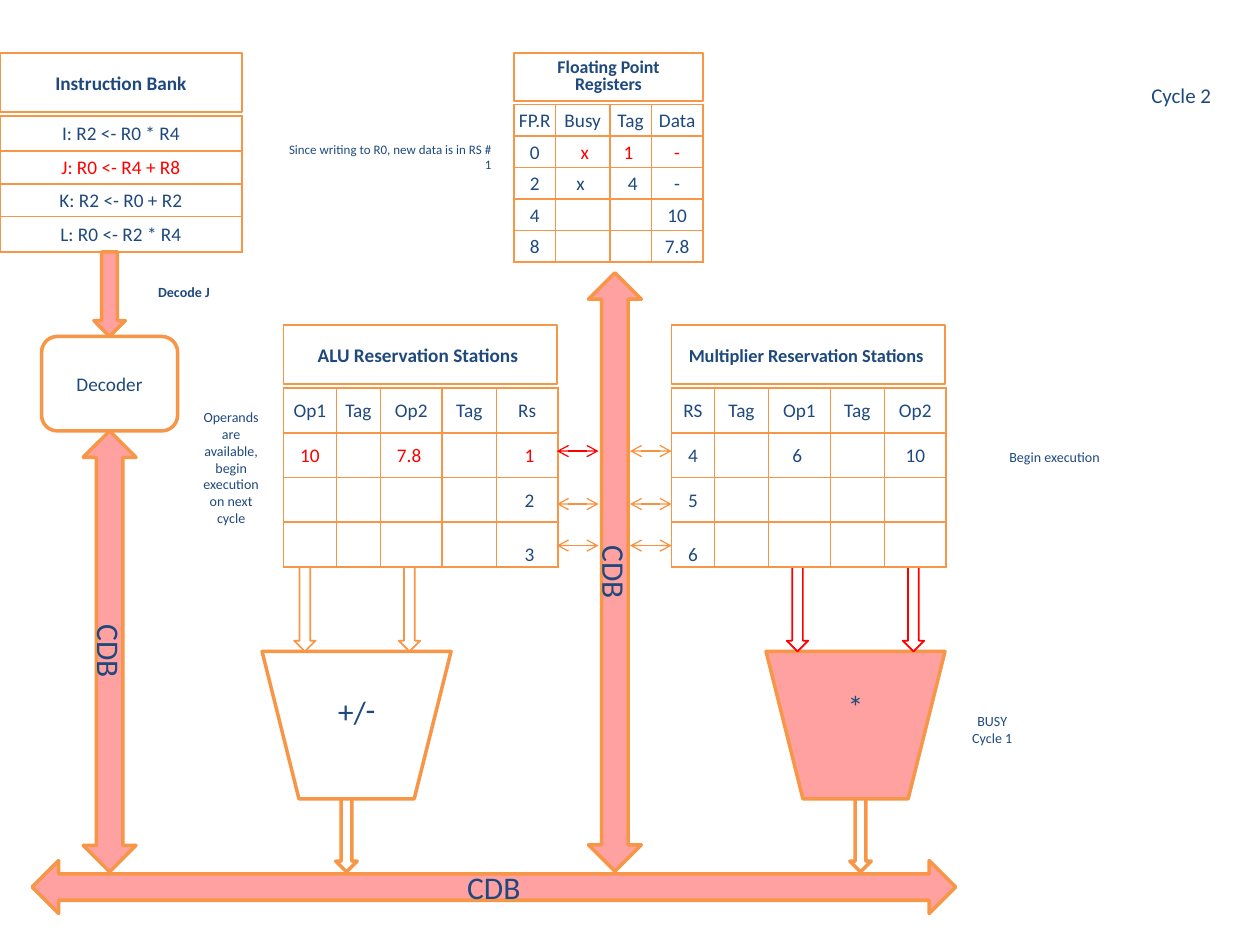
import pptx
import pptx.util
import pptx.dml.color
import pptx.enum.shapes
import pptx.enum.text
import pptx.oxml
import pptx.oxml.ns
import lxml.etree

Inches = pptx.util.Inches
Pt = pptx.util.Pt
SHAPE = pptx.enum.shapes.MSO_SHAPE
ALIGN = pptx.enum.text.PP_ALIGN
ANCHOR = pptx.enum.text.MSO_ANCHOR
qn = pptx.oxml.ns.qn

COLORS = {"navy": "1F497D", "orange": "F79646", "link": "F69240", "red": "FF0000", "white": "FFFFFF"}
BUSY_OPACITY = 37000
ARROW_WIDTH = 0.17
FEED_HEIGHT = 0.67
TITLE_HEIGHT = 0.47
TITLE_GAP = 0.03


def rgb(name):
    return pptx.dml.color.RGBColor.from_string(COLORS[name])


def write(frame, content, size=11, color="navy", bold=False, align=ALIGN.CENTER, spacing=None):
    frame.word_wrap = True
    frame.auto_size = pptx.enum.text.MSO_AUTO_SIZE.NONE
    frame.vertical_anchor = ANCHOR.MIDDLE
    for index, line in enumerate(content.split("\n")):
        paragraph = frame.paragraphs[0] if index == 0 else frame.add_paragraph()
        paragraph.alignment = align
        paragraph.line_spacing = spacing
        run = paragraph.add_run()
        run.text = line
        run.font.name = "Calibri"
        run.font.size = Pt(size)
        run.font.bold = bold
        run.font.color.rgb = rgb(color)


def paint(shape, line="orange", weight=1, busy=False):
    shape.fill.solid()
    shape.fill.fore_color.rgb = rgb("red" if busy else "white")
    if busy:
        tint = shape.fill._xPr.find(qn("a:solidFill"))[0]
        lxml.etree.SubElement(tint, qn("a:alpha")).set("val", str(BUSY_OPACITY))
    if line:
        shape.line.color.rgb = rgb(line)
        shape.line.width = Pt(weight)
    else:
        shape.line.fill.background()


def add_block(slide, preset, box, **style):
    block = slide.shapes.add_shape(preset, *map(Inches, box))
    block.shadow.inherit = False
    paint(block, **style)
    return block


def add_note(slide, box, content, **format):
    note = add_block(slide, SHAPE.RECTANGLE, box, line=None)
    write(note.text_frame, content, **format)


def add_heading(slide, box, content, **format):
    heading = add_block(slide, SHAPE.RECTANGLE, box)
    write(heading.text_frame, content, bold=True, **format)


def add_down_arrow(slide, center, top, height, width=ARROW_WIDTH, **style):
    add_block(slide, SHAPE.DOWN_ARROW, (center - width / 2, top, width, height), **style)


def format_cell(cell, content, color):
    cell.margin_left = cell.margin_right = cell.margin_top = Inches(0.01)
    cell.margin_bottom = 0
    cell.vertical_anchor = ANCHOR.MIDDLE
    if content:
        write(cell.text_frame, content, color=color)
        cell.text_frame.auto_size = None
    else:
        cell.text_frame.paragraphs[0]._p.get_or_add_endParaRPr().set("sz", "1100")
    properties = cell._tc.get_or_add_tcPr()
    for side in ("L", "R", "T", "B"):
        border = lxml.etree.SubElement(properties, qn("a:ln" + side), w=str(Pt(1)))
        fill = lxml.etree.SubElement(border, qn("a:solidFill"))
        lxml.etree.SubElement(fill, qn("a:srgbClr"), val=COLORS["orange"])
    cell.fill.background()


def add_grid(slide, left, top, widths, heights, rows, red=()):
    frame = slide.shapes.add_table(len(rows), len(widths), Inches(left), Inches(top),
                                   Inches(sum(widths)), Inches(sum(heights)))
    grid = frame.table
    grid.first_row = grid.horz_banding = False
    for column, width in zip(grid.columns, widths):
        column.width = Inches(width)
    for r, (row, height) in enumerate(zip(rows, heights)):
        grid.rows[r].height = Inches(height)
        for c, content in enumerate(row):
            format_cell(grid.cell(r, c), content, "red" if (r, c) in red else "navy")
    return grid


def add_instruction_bank(slide, left, top, width):
    add_heading(slide, (left, top, width, TITLE_HEIGHT), "Instruction Bank")
    instructions = ["I: R2 <- R0 * R4", "J: R0 <- R4 + R8", "K: R2 <- R0 + R2", "L: R0 <- R2 * R4"]
    add_grid(slide, left, top + 0.5, [width], [0.28, 0.26, 0.26, 0.28],
             [[instruction] for instruction in instructions], red={(1, 0)})


def add_decoder(slide, left, top, width, height):
    center = left + width / 2
    add_down_arrow(slide, center, top - FEED_HEIGHT, FEED_HEIGHT, width=0.25, weight=2, busy=True)
    decoder = add_block(slide, SHAPE.ROUNDED_RECTANGLE, (left, top, width, height), weight=2)
    write(decoder.text_frame, "Decoder")
    add_note(slide, (left + 0.67, top - 0.5, 0.92, 0.3), "Decode J", size=8, bold=True)


def add_registers(slide, left, top, width):
    add_heading(slide, (left, top, width, 0.38), "Floating Point Registers", size=10.2, spacing=0.8)
    rows = [["FP.R", "Busy", "Tag", "Data"],
            ["0", " x", "1 ", "-"],
            ["2", "x ", " 4", "-"],
            ["4", "", "", "10"],
            ["8", "", "", "7.8"]]
    add_grid(slide, left, top + 0.41, [0.33, 0.43, 0.33, 0.41], [0.25] * 5, rows,
             red={(1, 1), (1, 2), (1, 3)})


def add_station(slide, left, top, widths, rows, low_cell, red=()):
    grid = add_grid(slide, left, top + TITLE_HEIGHT + TITLE_GAP, widths, [0.355] * 4, rows, red)
    grid.cell(*low_cell).vertical_anchor = ANCHOR.BOTTOM


def add_links(slide, left, tops, colors):
    for top, color in zip(tops, colors):
        link = slide.shapes.add_connector(pptx.enum.shapes.MSO_CONNECTOR.STRAIGHT, Inches(left),
                                          Inches(top), Inches(left + 0.33), Inches(top))
        link.line.color.rgb = rgb(color)
        link.line.width = Pt(0.75)
        line = link.line._get_or_add_ln()
        for end in ("a:headEnd", "a:tailEnd"):
            lxml.etree.SubElement(line, qn(end), type="arrow")
        lxml.etree.SubElement(link._element.spPr, qn("a:effectLst"))


def add_unit(slide, left, top, width, sign, inputs, output, feed_line="orange", busy=False, lift=0.05):
    height = 1.17
    unit = add_block(slide, SHAPE.TRAPEZOID, (left, top, width, height), weight=2, busy=busy)
    unit.rotation = 180
    write(unit.text_frame, sign, size=18)
    unit.text_frame.margin_top = Inches(lift)
    for center in inputs:
        add_down_arrow(slide, center, top - FEED_HEIGHT, FEED_HEIGHT, line=feed_line)
    add_down_arrow(slide, output, top + height, 0.58, weight=2)


def add_bus(slide, center_x, center_y, length, rotation=0):
    thickness = 0.42
    box = (center_x - length / 2, center_y - thickness / 2, length, thickness)
    bus = add_block(slide, SHAPE.LEFT_RIGHT_ARROW, box, weight=2, busy=True)
    bus.rotation = rotation
    write(bus.text_frame, "CDB", size=18)


def main():
    deck = pptx.Presentation()
    deck.slide_width, deck.slide_height = Inches(10), Inches(7.5)
    slide = deck.slides.add_slide(deck.slide_layouts[5])

    title = slide.shapes.title
    title.left, title.top, title.width, title.height = map(Inches, (5.33, 2.58, 2.17, TITLE_HEIGHT))
    paint(title)
    write(title.text_frame, "Multiplier Reservation Stations ", size=10.5, bold=True)
    add_heading(slide, (2.25, 2.58, 2.17, TITLE_HEIGHT), "ALU Reservation Stations ")

    add_unit(slide, 6.08, 5.17, 1.42, "*", (6.33, 7.25), 6.83, feed_line="red", busy=True, lift=0.35)
    add_unit(slide, 2.08, 5.17, 1.5, "-/+", (2.42, 3.25), 2.75)
    add_station(slide, 2.25, 2.58, [0.42, 0.35, 0.49, 0.43, 0.49],
                [["Op1", "Tag", "Op2", "Tag", "Rs"], ["10", "", "7.8 ", "", " 1"],
                 ["", "", "", "", " 2"], ["", "", "", "", " 3"]],
                low_cell=(3, 4), red={(1, 0), (1, 2), (1, 4)})
    add_station(slide, 5.33, 2.58, [0.34, 0.43, 0.49, 0.43, 0.49],
                [["RS", "Tag", "Op1", "Tag", "Op2"], ["4", "", "6 ", "", "10"],
                 ["5", "", "", "", ""], ["6", "", "", "", ""]], low_cell=(3, 0))

    add_bus(slide, 4.88, 4.54, 4.75, rotation=90)
    add_bus(slide, 0.87, 5.17, 3.5, rotation=90)
    add_bus(slide, 3.92, 7.04, 7.33)
    link_tops = (3.58, 4, 4.33)
    add_links(slide, 4.42, link_tops, ("red", "link", "link"))
    add_links(slide, 5, link_tops, ("link",) * 3)

    add_instruction_bank(slide, 0, 0.42, 1.92)
    add_registers(slide, 4.08, 0.42, 1.5)
    add_decoder(slide, 0.33, 2.67, 1.08, 0.75)

    add_note(slide, (7.58, 3.5, 1.58, 0.25), "Begin execution", size=8)
    add_note(slide, (7.5, 5.58, 0.75, 0.42), "BUSY\nCycle 1", size=8)
    add_note(slide, (2.17, 1.08, 1.83, 0.33), "Since writing to R0, new data is in RS # 1",
             size=7.4, align=ALIGN.RIGHT)
    add_note(slide, (8.75, 0.42, 1.25, 0.67), "Cycle 2", size=12)
    add_note(slide, (1.5, 3.17, 0.67, 1.08), "Operands are available, begin execution on next cycle", size=8)
    deck.save("out.pptx")


if __name__ == "__main__":
    main()
